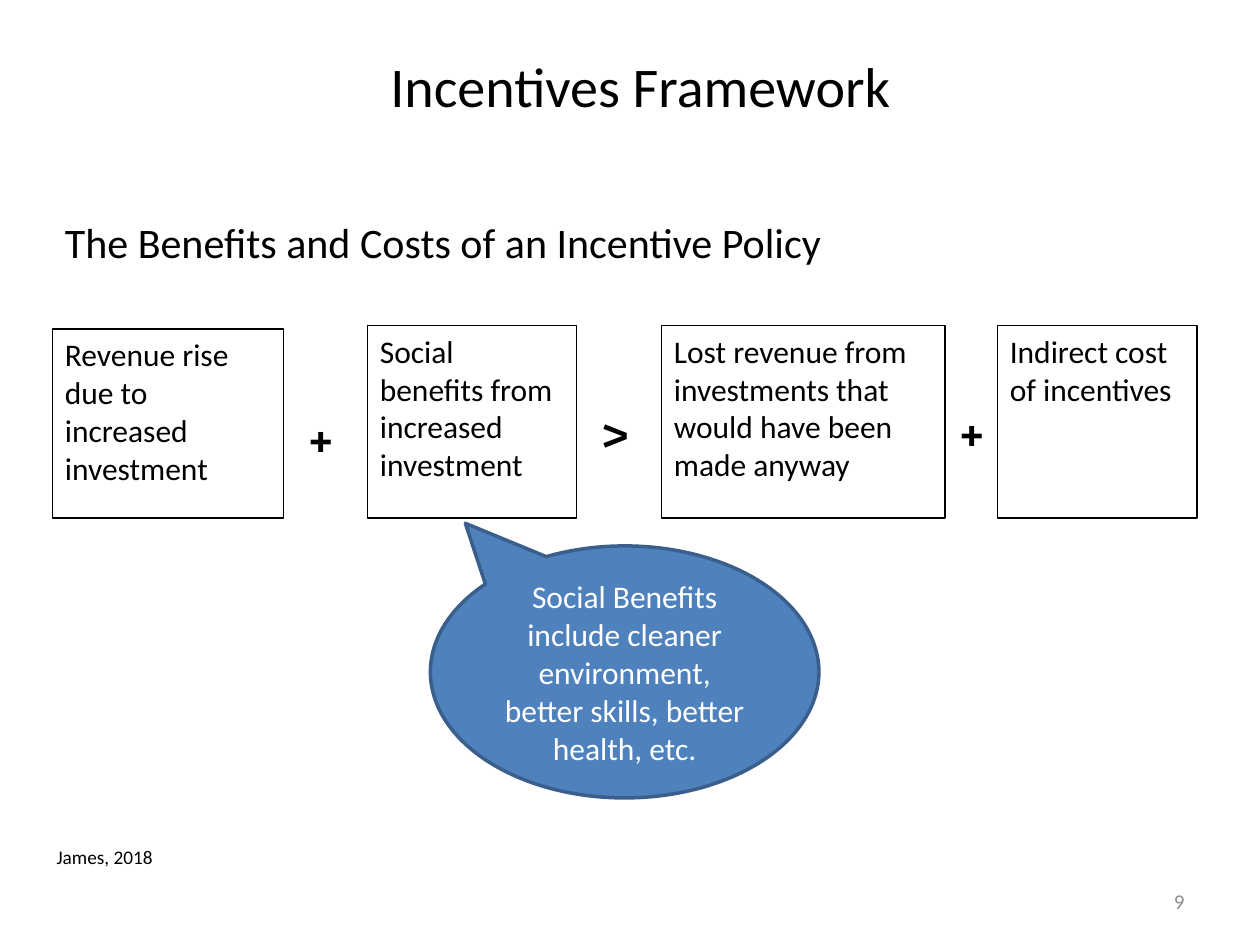
from pptx import Presentation
from pptx.dml.color import RGBColor
from pptx.enum.shapes import MSO_SHAPE
from pptx.enum.text import MSO_ANCHOR, PP_ALIGN
from pptx.util import Pt

TITLE = "Incentives Framework"
BOXES = [
    ("Revenue rise due to increased investment", 30, 188, 132),
    ("Social benefits from increased investment", 210, 186, 119.5),
    ("Lost revenue from investments that would have been made anyway", 378, 186, 162),
    ("Indirect cost of incentives", 570, 186, 114),
]
BASE = 296
SIGNS = [("+", 168, 229.5), (">", 336, 226), ("+", 540, 226)]
HEAD = "The Benefits and Costs of an Incentive Policy"
BUBBLE = "Social Benefits include cleaner environment, better skills, better health, etc."
SOURCE = "James, 2018"
PAGE = "9"


def color(code):
    return RGBColor.from_string(code)


def write(shape, text, size, ink="000000", align=PP_ALIGN.LEFT,
          anchor=MSO_ANCHOR.TOP, face="Calibri", bold=False, wrap=True):
    frame = shape.text_frame
    frame.text = text
    frame.word_wrap = wrap
    frame.vertical_anchor = anchor
    para = frame.paragraphs[0]
    para.alignment = align
    font = para.runs[0].font
    font.name, font.size, font.bold = face, Pt(size), bold
    font.color.rgb = color(ink)


def label(area, text, size, **look):
    box = slide.shapes.add_textbox(*map(Pt, area))
    write(box, text, size, **look)


def panel(kind, area, fill, edge, width):
    shape = slide.shapes.add_shape(kind, *map(Pt, area))
    shape.shadow.inherit = False
    shape.fill.solid()
    shape.fill.fore_color.rgb = color(fill)
    shape.line.color.rgb = color(edge)
    shape.line.width = Pt(width)
    return shape


deck = Presentation()
deck.slide_width, deck.slide_height = Pt(720), Pt(540)
slide = deck.slides.add_slide(deck.slide_layouts[5])

title = slide.shapes.title
title.left, title.top, title.width, title.height = map(Pt, (42, 14.5, 648, 68.5))
write(title, TITLE, 32, align=PP_ALIGN.CENTER, anchor=MSO_ANCHOR.MIDDLE)

label((516, 500.5, 168, 28.75), PAGE, 12, ink="8C8C8C",
      align=PP_ALIGN.RIGHT, anchor=MSO_ANCHOR.MIDDLE)

for text, left, top, width in BOXES:
    box = panel(MSO_SHAPE.RECTANGLE, (left, top, width, BASE - top),
                "FFFFFF", "000000", 0.75)
    write(box, text, 18)

for sign, left, top in SIGNS:
    label((left, top, 22.5, 41), sign, 28, face="Cambria", bold=True)

label((30, 120, 630, 36), HEAD, 24)

bubble = panel(MSO_SHAPE.OVAL_CALLOUT, (246, 312, 222, 144), "4F81BD", "3A5F8C", 2)
bubble.adjustments[0], bubble.adjustments[1] = -0.41, -0.59
write(bubble, BUBBLE, 18, ink="FFFFFF", align=PP_ALIGN.CENTER, anchor=MSO_ANCHOR.MIDDLE)

label((25.25, 479.5, 70.5, 20.5), SOURCE, 11, wrap=False)

deck.save("out.pptx")
